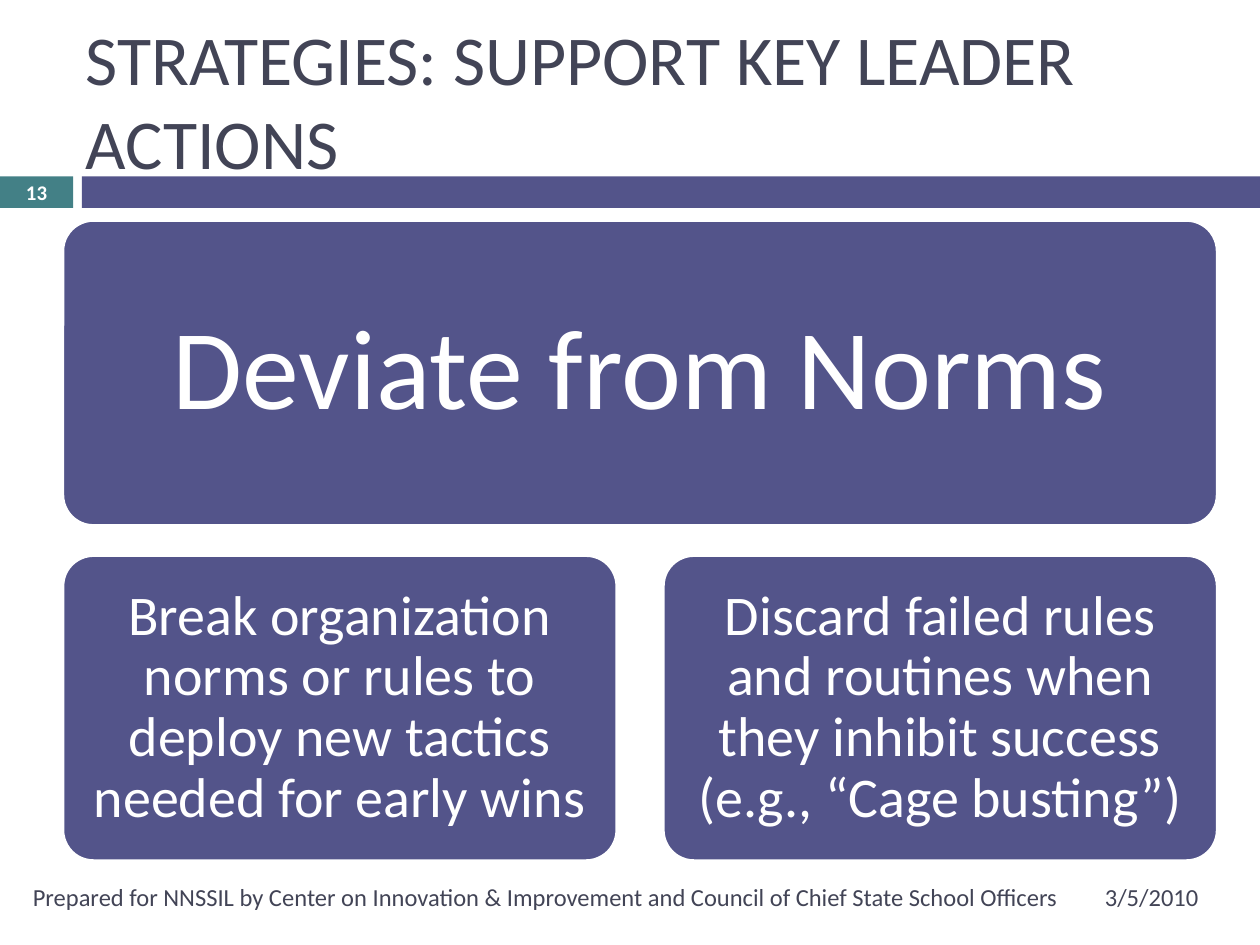
from pptx import Presentation
from pptx import util as u
from pptx.dml.color import RGBColor
from pptx.enum import shapes, text

FONT = "Calibri"
INDIGO, TEAL, SLATE, WHITE = "53548A", "438086", "424456", "FFFFFF"
LEFT, CENTER, RIGHT = text.PP_ALIGN.LEFT, text.PP_ALIGN.CENTER, text.PP_ALIGN.RIGHT


def color(value):
    """Turn a hex string into a colour."""
    return RGBColor.from_string(value)


def write(shape, words, size, ink=SLATE, bold=False, align=LEFT, spacing=1.0, insets=(0.1, 0.05)):
    """Put one formatted, vertically centred paragraph into a shape."""
    frame = shape.text_frame
    frame.word_wrap = True
    frame.auto_size = text.MSO_AUTO_SIZE.NONE
    frame.vertical_anchor = text.MSO_ANCHOR.MIDDLE
    frame.margin_left = frame.margin_right = u.Inches(insets[0])
    frame.margin_top = frame.margin_bottom = u.Inches(insets[1])
    para = frame.paragraphs[0]
    para.alignment = align
    para.line_spacing = spacing
    span = para.add_run()
    span.text = words
    span.font.name = FONT
    span.font.size = u.Pt(size)
    span.font.bold = bold
    span.font.color.rgb = color(ink)


def add_block(page, box, fill, kind=shapes.MSO_SHAPE.RECTANGLE):
    """Add a filled shape without outline or shadow."""
    block = page.shapes.add_shape(kind, *map(u.Inches, box))
    block.shadow.inherit = False
    block.fill.solid()
    block.fill.fore_color.rgb = color(fill)
    block.line.fill.background()
    return block


def add_label(page, box, words, size, **style):
    """Add a text box."""
    label = page.shapes.add_textbox(*map(u.Inches, box))
    write(label, words, size, **style)


def add_card(page, box, words, size, inset):
    """Add a rounded card with a white outline and centred text."""
    card = add_block(page, box, INDIGO, shapes.MSO_SHAPE.ROUNDED_RECTANGLE)
    card.adjustments[0] = 0.1
    card.line.color.rgb = color(WHITE)
    card.line.width = u.Pt(1.5)
    write(card, words, size, ink=WHITE, align=CENTER, spacing=0.9, insets=(inset, inset))


def add_header(page, box, heading, number):
    """Place the title above a band that starts with the page number."""
    left, top, width, height = box
    tab, gap, band_top, band = 0.58, 0.07, top + 1.4, 0.25
    add_block(page, (left + tab + gap, band_top, width - tab - gap, band), INDIGO)
    number_tab = add_block(page, (left, band_top, tab, band), TEAL)
    write(number_tab, number, 11.9, ink=WHITE, bold=True, align=CENTER, insets=(0, 0))
    title = page.shapes.title
    title.left, title.top = u.Inches(left + tab), u.Inches(top)
    title.width, title.height = u.Inches(width - tab), u.Inches(height)
    write(title, heading, 40)


def add_hierarchy(page, box, main, details):
    """Place a wide main card over an equal row of detail cards."""
    left, top, width, height = box
    column_gap, row_gap = 0.37, 0.24
    card_height = (height - row_gap) / 2
    card_width = (width - column_gap * (len(details) - 1)) / len(details)
    add_card(page, (left, top, width, card_height), main, 65, 0.2)
    for index, words in enumerate(details):
        x = left + index * (card_width + column_gap)
        add_card(page, (x, top + card_height + row_gap, card_width, card_height), words, 32, 0.06)


def add_footer(page, box, credit, date):
    """Place the credit line and the date side by side."""
    left, top, width, height = box
    add_label(page, (left, top, 8.5, height), credit, 14, align=RIGHT)
    add_label(page, (left + 8.67, top, width - 8.67, height), date, 14)


def main():
    """Build and save the deck."""
    deck = Presentation()
    deck.slide_width, deck.slide_height = u.Inches(10), u.Inches(7.5)
    page = deck.slides.add_slide(deck.slide_layouts[5])
    add_header(page, (0, 0, 10, 1.58), "STRATEGIES: SUPPORT KEY LEADER ACTIONS", "13")
    add_hierarchy(page, (0.5, 1.75, 9.16, 5.08), "Deviate from Norms", [
        "Break organization norms or rules to deploy new tactics needed for early wins",
        "Discard failed rules and routines when they inhibit success (e.g., “Cage busting”)",
    ])
    add_footer(
        page, (0, 6.92, 9.75, 0.4),
        "Prepared for NNSSIL by Center on Innovation & Improvement "
        "and Council of Chief State School Officers",
        "3/5/2010",
    )
    deck.save("out.pptx")


if __name__ == "__main__":
    main()
